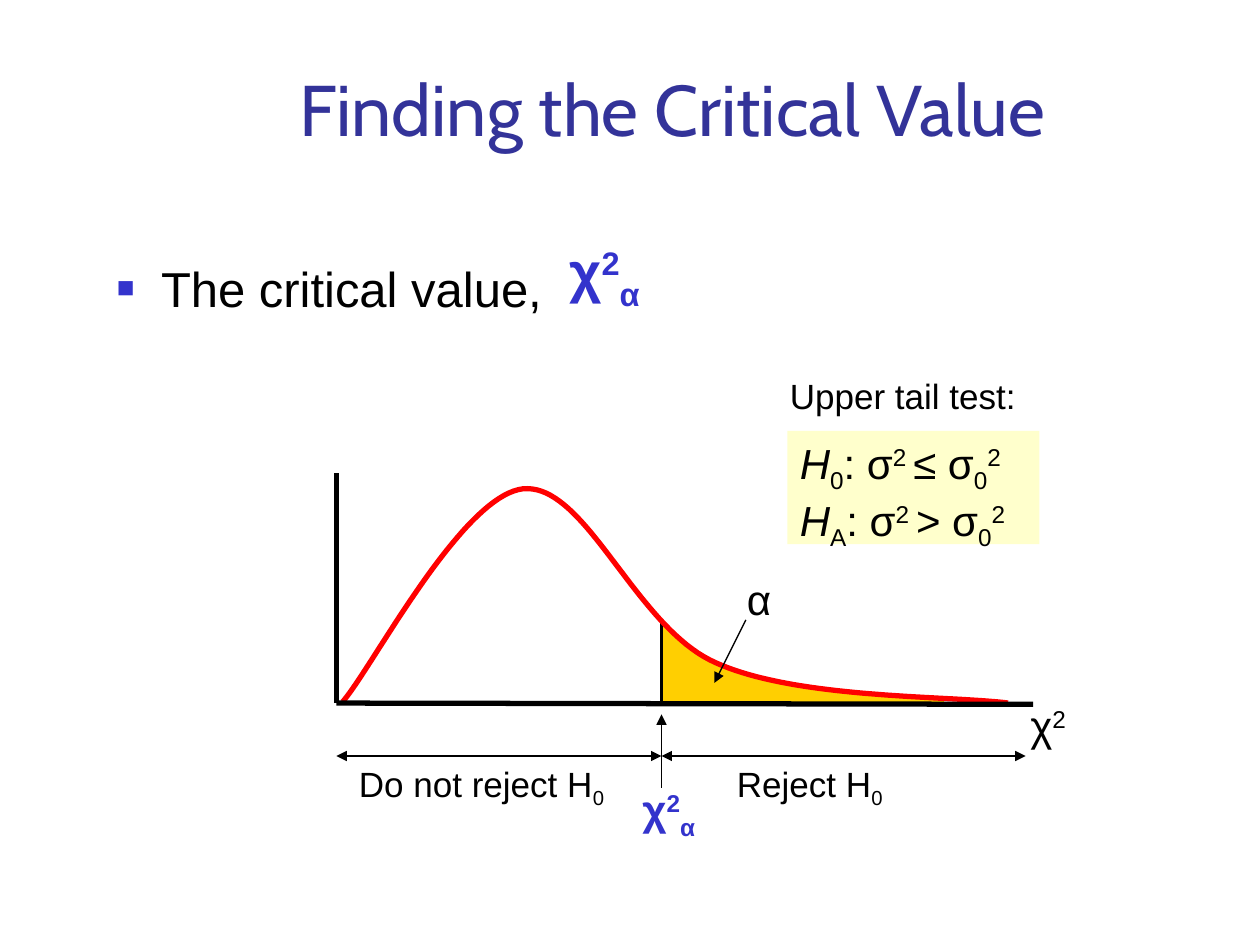
"""Build a slide on the critical value of an upper tail chi-square test."""
from dataclasses import dataclass
from typing import NamedTuple

from lxml.etree import SubElement
from pptx import Presentation
from pptx.dml.color import RGBColor
from pptx.enum.shapes import MSO_CONNECTOR, MSO_SHAPE
from pptx.enum.text import MSO_ANCHOR, MSO_AUTO_SIZE, PP_ALIGN
from pptx.oxml.ns import qn
from pptx.util import Inches, Pt


@dataclass(frozen=True)
class Theme:
    title_font: str = "Cabin"
    font: str = "Arial"
    title: str = "333399"
    accent: str = "3333CC"
    ink: str = "000000"
    curve: str = "FF0000"
    tail: str = "FFCF01"
    panel: str = "FFFFCC"
    title_size: int = 41
    big: int = 32
    body: int = 28
    symbol: int = 24
    label: int = 20
    thin: float = 0.75
    medium: float = 2.25
    thick: float = 3


class Run(NamedTuple):
    text: str
    base: int = 0
    italic: bool = False


class Line(NamedTuple):
    start: tuple[float, float]
    end: tuple[float, float]
    width: float
    ends: tuple[str, ...] = ()


class Label(NamedTuple):
    box: tuple[float, float, float, float]
    runs: list[Run]
    size: int
    color: str = Theme.ink
    bold: bool = False


def sub(text: str) -> Run:
    """Return a subscript run."""
    return Run(text, -25)


def sup(text: str) -> Run:
    """Return a superscript run."""
    return Run(text, 30)


T = Theme()
BOTH = ("headEnd", "tailEnd")
LEFT, CUT, AXIS_Y, SPAN_Y = 2.67, 5.25, 5.58, 6
CRITICAL = [Run("χ"), sup("2"), sub("α")]

LINES = [
    Line((LEFT, AXIS_Y), (8.2, 5.59), T.thick),
    Line((LEFT, AXIS_Y), (LEFT, 3.75), T.thick),
    Line((5.92, 4.92), (5.67, 5.42), T.thin, ("tailEnd",)),
    Line((CUT, SPAN_Y), (8.14, SPAN_Y), T.thin, BOTH),
    Line((CUT, SPAN_Y), (LEFT, SPAN_Y), T.thin, BOTH),
    Line((CUT, 6.25), (CUT, 5.67), T.thin, ("tailEnd",)),
]
LABELS = [
    Label((2.75, 6, 2.25, 0.43), [Run("Do not reject H"), sub("0")], T.label),
    Label((5.75, 6, 1.5, 0.43), [Run("Reject H"), sub("0")], T.label),
    Label((5.83, 4.5, 0.42, 0.5), [Run("α")], T.symbol),
    Label((5, 6.17, 0.75, 0.5), CRITICAL, T.symbol, T.accent, True),
    Label((8.08, 5.5, 0.75, 0.5), [Run("χ"), sup("2")], T.symbol),
    Label((4.42, 1.83, 0.92, 0.63), CRITICAL, T.big, T.accent, True),
    Label((6.17, 2.92, 2.25, 0.43), [Run("Upper tail test:")], T.label),
]
TAIL = [(CUT, AXIS_Y), (5.26, 4.93), (5.42, 5.1), (5.57, 5.2), (5.78, 5.29), (6.01, 5.38),
        (6.36, 5.44), (6.72, 5.48), (7.48, 5.54), (7.5, 5.59)]
CURVE = [(2.72, 5.57), (2.96, 5.29), (3.66, 3.94), (4.15, 3.88), (4.65, 3.83), (5.04, 4.98),
         (5.68, 5.26), (6.32, 5.55), (7.52, 5.52), (8, AXIS_Y)]


def rgb(color: str) -> RGBColor:
    """Return a colour object for a hex string."""
    return RGBColor.from_string(color)


def add_text(sp, paragraphs: list[list[Run]], *, size: int, color: str = T.ink, font: str = T.font,
             bold: bool = False, align=PP_ALIGN.LEFT, anchor=MSO_ANCHOR.TOP,
             fit=MSO_AUTO_SIZE.SHAPE_TO_FIT_TEXT, bullet: str = "") -> None:
    """Fill a shape with formatted paragraphs."""
    tf = sp.text_frame
    tf.word_wrap, tf.auto_size, tf.vertical_anchor = True, fit, anchor
    for i, runs in enumerate(paragraphs):
        p = tf.add_paragraph() if i else tf.paragraphs[0]
        p.alignment = align
        if bullet:
            add_bullet(p, bullet)
        for run in runs:
            r = p.add_run()
            r.text = run.text
            f = r.font
            f.name, f.size, f.bold, f.italic = font, Pt(size), bold, run.italic
            f.color.rgb = rgb(color)
            if run.base:
                f._element.set("baseline", str(run.base * 1000))


def add_bullet(p, char: str) -> None:
    """Give a paragraph a hanging accent-coloured bullet."""
    pPr = p._p.get_or_add_pPr()
    pPr.set("marL", str(Inches(0.35)))
    pPr.set("indent", str(Inches(-0.35)))
    SubElement(SubElement(pPr, qn("a:buClr")), qn("a:srgbClr"), val=T.accent)
    SubElement(pPr, qn("a:buSzPct"), val="60000")
    SubElement(pPr, qn("a:buFont"), typeface=T.font)
    SubElement(pPr, qn("a:buChar"), char=char)


def add_box(s, box: tuple[float, float, float, float]):
    """Add an empty text box."""
    return s.shapes.add_textbox(*map(Inches, box))


def add_line(s, line: Line) -> None:
    """Draw a straight line with optional arrowheads."""
    sp = s.shapes.add_connector(MSO_CONNECTOR.STRAIGHT, *map(Inches, line.start + line.end))
    sp.line.color.rgb, sp.line.width = rgb(T.ink), Pt(line.width)
    for end in line.ends:
        SubElement(sp.line._get_or_add_ln(), qn(f"a:{end}"), type="triangle")
    SubElement(sp._element.spPr, qn("a:effectLst"))


def add_outline(s, points: list[tuple[float, float]], close: bool):
    """Draw a freeform through points without a shadow."""
    pts = [(Inches(x), Inches(y)) for x, y in points]
    fb = s.shapes.build_freeform(*pts[0])
    fb.add_line_segments(pts[1:], close=close)
    sp = fb.convert_to_shape()
    sp.shadow.inherit = False
    return sp


def smooth(controls: list[tuple[float, float]], steps: int = 40) -> list[tuple[float, float]]:
    """Sample a chain of cubic Bezier segments."""
    points = [controls[0]]
    for i in range(0, len(controls) - 1, 3):
        for k in range(1, steps + 1):
            t = k / steps
            weights = ((1 - t) ** 3, 3 * t * (1 - t) ** 2, 3 * t * t * (1 - t), t ** 3)
            points.append(tuple(sum(w * c[axis] for w, c in zip(weights, controls[i:i + 4]))
                                for axis in (0, 1)))
    return points


def hypothesis(index: str, relation: str) -> list[Run]:
    """Return the runs of one hypothesis about the variance."""
    return [Run("H", italic=True), sub(index), Run(": σ"), sup("2 "),
            Run(f"{relation} σ"), sub("0"), sup("2")]


def main() -> None:
    """Build and save the slide."""
    prs = Presentation()
    prs.slide_width, prs.slide_height = Inches(10), Inches(7.5)
    s = prs.slides.add_slide(prs.slide_layouts[6])

    tail = add_outline(s, TAIL, close=True)
    tail.fill.solid()
    tail.fill.fore_color.rgb = rgb(T.tail)
    tail.line.fill.background()
    add_line(s, Line((CUT, AXIS_Y), (CUT, 4.92), T.medium))
    curve = add_outline(s, smooth(CURVE), close=False)
    curve.fill.background()
    curve.line.color.rgb, curve.line.width = rgb(T.curve), Pt(T.thick)
    for line in LINES:
        add_line(s, line)

    add_text(add_box(s, (1.08, 0.42, 8.52, 0.83)), [[Run("Finding the Critical Value")]],
             size=T.title_size, color=T.title, font=T.title_font, align=PP_ALIGN.CENTER,
             anchor=MSO_ANCHOR.BOTTOM, fit=MSO_AUTO_SIZE.NONE)
    add_text(add_box(s, (0.83, 2, 8.83, 1.25)), [[Run("The critical value,")]],
             size=T.body, fit=MSO_AUTO_SIZE.NONE, bullet="■")
    for label in LABELS:
        add_text(add_box(s, label.box), [label.runs], size=label.size,
                 color=label.color, bold=label.bold)

    panel = s.shapes.add_shape(MSO_SHAPE.RECTANGLE, *map(Inches, (6.25, 3.42, 2, 0.9)))
    panel.shadow.inherit = False
    panel.fill.solid()
    panel.fill.fore_color.rgb = rgb(T.panel)
    panel.line.fill.background()
    add_text(panel, [hypothesis("0", "≤"), hypothesis("A", ">")], size=T.symbol)
    prs.save("out.pptx")


if __name__ == "__main__":
    main()
